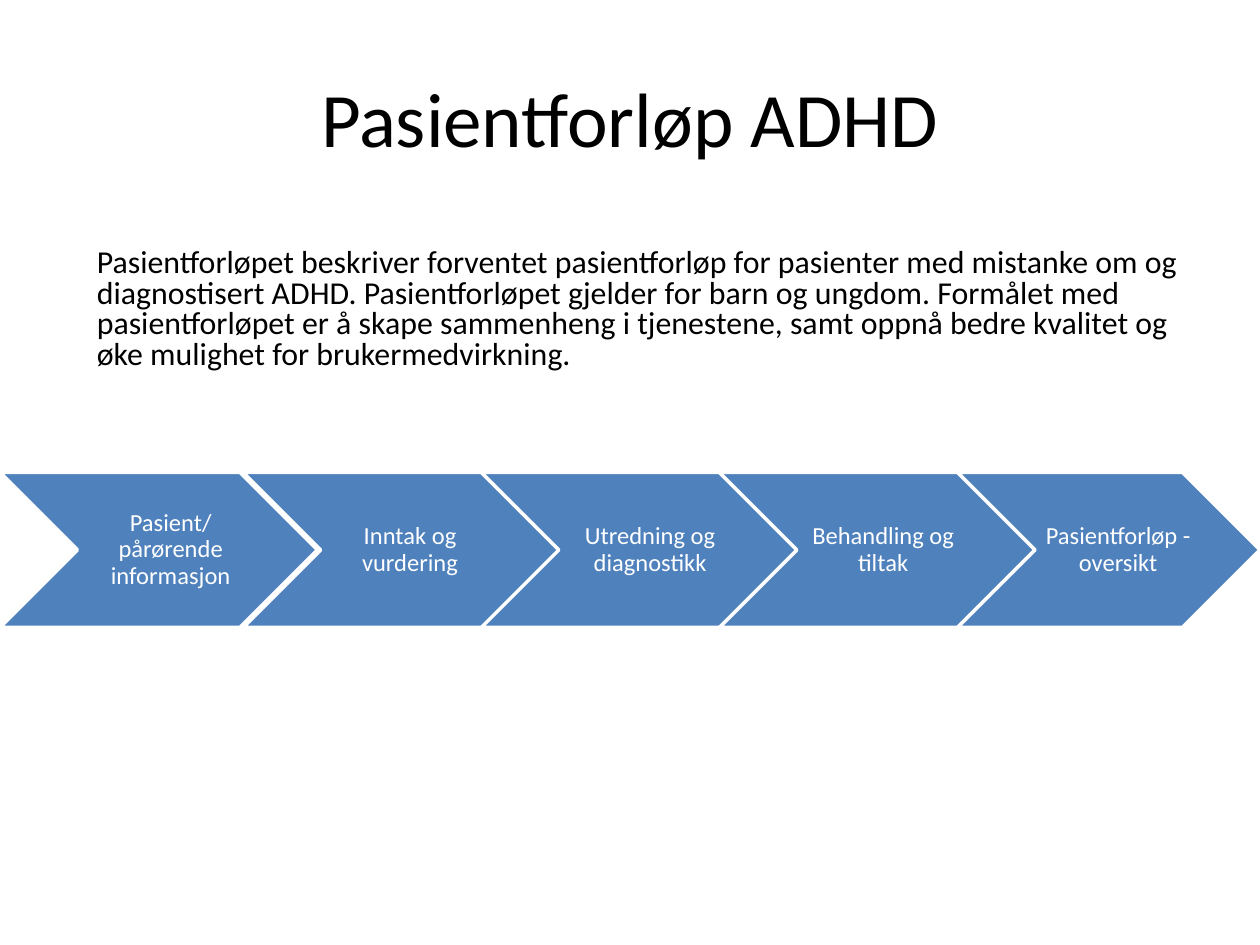
from dataclasses import dataclass

from pptx import Presentation
from pptx import util as u
from pptx.dml.color import RGBColor
from pptx.enum import shapes, text

BLACK = RGBColor(0x00, 0x00, 0x00)
WHITE = RGBColor(0xFF, 0xFF, 0xFF)
BLUE = RGBColor(0x4F, 0x81, 0xBD)
FONT = "Calibri"
SLIDE_WIDTH, SLIDE_HEIGHT = u.Inches(10), u.Inches(7.5)
FLOW_TOP, FLOW_HEIGHT = 50, 16.4
FLOW_START, FLOW_PITCH = 0.4, 18.9
DEFAULT_INSETS = (0.1, 0.05, 0.1, 0.05)
STEP_INSETS = (0.05, 0.02, 0.02, 0.02)


@dataclass(frozen=True)
class Area:
    """Percentages of the slide's width and height."""

    left: float
    top: float
    width: float
    height: float

    def emu(self) -> tuple[int, int, int, int]:
        return (
            round(SLIDE_WIDTH * self.left / 100),
            round(SLIDE_HEIGHT * self.top / 100),
            round(SLIDE_WIDTH * self.width / 100),
            round(SLIDE_HEIGHT * self.height / 100),
        )


@dataclass(frozen=True)
class Style:
    size: float
    color: RGBColor = BLACK
    align: text.PP_ALIGN = text.PP_ALIGN.CENTER
    spacing: float = 1.0
    insets: tuple[float, float, float, float] = DEFAULT_INSETS


@dataclass(frozen=True)
class Step:
    label: str
    width: float
    label_indent: float
    label_width: float
    shift: float = 0


TITLE = Style(44)
INTRO = Style(18.2, align=text.PP_ALIGN.LEFT, spacing=0.8,
              insets=(0.1, 0.05, 0.1, 0.25))
STEP = Style(14, WHITE, spacing=0.9, insets=STEP_INSETS)

STEPS = (
    Step("Pasient/ pårørende informasjon", 25.2, 6.7, 13.4, shift=-0.4),
    Step("Inntak og vurdering", 26, 5.3, 15.6),
    Step("Utredning og diagnostikk", 25.2, 6.3, 13.9),
    Step("Behandling og tiltak", 26, 5.2, 15.3),
    Step("Pasientforløp - oversikt", 24, 6.3, 12.6),
)


def add_text(parent, wording: str, area: Area, style: Style) -> None:
    frame = parent.add_textbox(*area.emu()).text_frame
    frame.word_wrap = True
    frame.vertical_anchor = text.MSO_ANCHOR.MIDDLE
    (frame.margin_left, frame.margin_top,
     frame.margin_right, frame.margin_bottom) = map(u.Inches, style.insets)
    paragraph = frame.paragraphs[0]
    paragraph.text = wording
    paragraph.alignment = style.align
    paragraph.line_spacing = style.spacing
    paragraph.font.name = FONT
    paragraph.font.size = u.Pt(style.size)
    paragraph.font.color.rgb = style.color


def add_step(slide, column: int, step: Step) -> None:
    left = FLOW_START + column * FLOW_PITCH + step.shift
    group = slide.shapes.add_group_shape().shapes
    chevron = group.add_shape(
        shapes.MSO_SHAPE.CHEVRON,
        *Area(left, FLOW_TOP, step.width, FLOW_HEIGHT).emu())
    chevron.adjustments[0] = 0.5
    chevron.shadow.inherit = False
    chevron.fill.solid()
    chevron.fill.fore_color.rgb = BLUE
    chevron.line.color.rgb = WHITE
    chevron.line.width = u.Pt(2)
    label_area = Area(left + step.label_indent, FLOW_TOP,
                      step.label_width, FLOW_HEIGHT)
    add_text(group, step.label, label_area, STEP)


def main() -> None:
    deck = Presentation()
    deck.slide_width, deck.slide_height = SLIDE_WIDTH, SLIDE_HEIGHT
    slide = deck.slides.add_slide(deck.slide_layouts[6])
    add_text(slide.shapes, "Pasientforløp ADHD", Area(5, 4, 90, 16.67), TITLE)
    for column, step in enumerate(STEPS):
        add_step(slide, column, step)
    add_text(
        slide.shapes,
        "Pasientforløpet beskriver forventet pasientforløp for pasienter med "
        "mistanke om og diagnostisert ADHD. Pasientforløpet gjelder for barn "
        "og ungdom. Formålet med pasientforløpet er å skape sammenheng i "
        "tjenestene, samt oppnå bedre kvalitet og øke mulighet for "
        "brukermedvirkning.",
        Area(6.7, 23.73, 90, 20.93), INTRO)
    deck.save("out.pptx")


if __name__ == "__main__":
    main()
